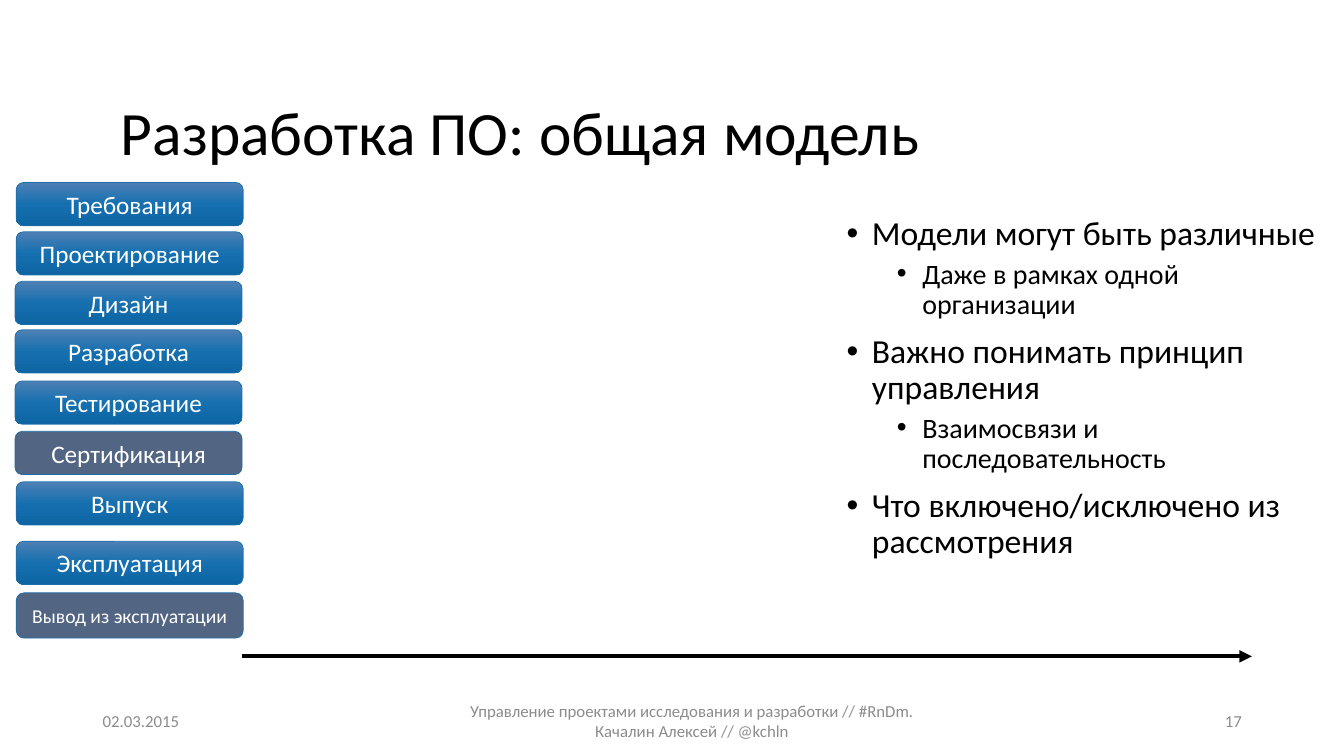
from copy import deepcopy

from lxml import etree
from pptx import Presentation
from pptx import util as u
from pptx.dml.color import RGBColor
from pptx.enum import shapes, text
from pptx.oxml.ns import qn

BLACK = RGBColor(0x00, 0x00, 0x00)
WHITE = RGBColor(0xFF, 0xFF, 0xFF)
GREY = RGBColor(0x8C, 0x8C, 0x8C)
SLATE = RGBColor(0x52, 0x65, 0x82)
OUTLINE = RGBColor(0x1D, 0x6F, 0xA9)
BLUES = [RGBColor(0x4E, 0x80, 0xB5), RGBColor(0x16, 0x70, 0xB0), RGBColor(0x0D, 0x65, 0xA3)]
LEFT, CENTER, RIGHT = text.PP_ALIGN.LEFT, text.PP_ALIGN.CENTER, text.PP_ALIGN.RIGHT


def write(paragraph, words, size, color=BLACK, align=LEFT, spacing=1.0, before=0):
    paragraph.alignment = align
    paragraph.line_spacing = spacing
    paragraph.space_before = u.Pt(before)
    run = paragraph.add_run()
    run.text = words
    run.font.name = "Calibri"
    run.font.size = u.Pt(size)
    run.font.color.rgb = color


def place(shape, left, top, width, height, anchor=text.MSO_ANCHOR.MIDDLE):
    shape.left, shape.top = u.Cm(left), u.Cm(top)
    shape.width, shape.height = u.Cm(width), u.Cm(height)
    frame = shape.text_frame
    frame.word_wrap = True
    frame.auto_size = text.MSO_AUTO_SIZE.NONE
    frame.vertical_anchor = anchor
    return frame


prs = Presentation()
prs.slide_width, prs.slide_height = u.Cm(33.87), u.Cm(19.05)
slide = prs.slides.add_slide(prs.slide_layouts[1])

# Title
heading = place(slide.shapes.title, 2.79, 2.13, 28.73, 2.57)
write(heading.paragraphs[0], "Разработка ПО: общая модель", 44, spacing=0.9)

# Date, footer and slide number
for left, width, align, words in [
    (2.34, 7.62, LEFT, "02.03.2015"),
    (11.23, 12.42, CENTER,
     "Управление проектами исследования и разработки // #RnDm. Качалин Алексей // @kchln"),
    (23.93, 7.62, RIGHT, "17"),
]:
    footer = place(slide.shapes.add_textbox(0, 0, 0, 0), left, 17.65, width, 1.02)
    write(footer.paragraphs[0], words, 12, GREY, align)

# Time arrow
timeline = slide.shapes.add_connector(
    shapes.MSO_CONNECTOR.STRAIGHT, u.Cm(6.1), u.Cm(16.54), u.Cm(31.55), u.Cm(16.54))
timeline.line.color.rgb = BLACK
timeline.line.width = u.Pt(3)
etree.SubElement(timeline.line._get_or_add_ln(), qn("a:tailEnd"), type="triangle")
etree.SubElement(timeline._element.spPr, qn("a:effectLst"))

# Life cycle stages; the optional ones are slate
for left, top, words, optional in [
    (0.41, 4.6, "Требования", False),
    (0.41, 5.84, "Проектирование", False),
    (0.38, 7.09, "Дизайн", False),
    (0.38, 8.31, "Разработка", False),
    (0.38, 9.6, "Тестирование", False),
    (0.38, 10.87, "Сертификация", True),
    (0.41, 12.14, "Выпуск", False),
    (0.41, 13.64, "Эксплуатация", False),
    (0.41, 14.94, "Вывод из эксплуатации", True),
]:
    is_long = len(words) > 14
    stage = slide.shapes.add_shape(shapes.MSO_SHAPE.ROUNDED_RECTANGLE, 0, 0, 0, 0)
    label = place(stage, left, top, 5.72, 1.14 if is_long else 1.09)
    write(label.paragraphs[0], words, 14 if is_long else 18, WHITE, CENTER)
    stage.shadow.inherit = False
    stage.line.color.rgb = OUTLINE
    stage.line.width = u.Pt(0.5)
    if optional:
        stage.fill.solid()
        stage.fill.fore_color.rgb = SLATE
    else:
        stage.fill.gradient()
        stage.fill.gradient_angle = 270
        stops = stage._element.spPr.find(".//" + qn("a:gsLst"))
        stops.append(deepcopy(stops[0]))
        for stop, position, blue in zip(stage.fill.gradient_stops, (0, 0.5, 1), BLUES):
            stop.position = position
            stop.color.rgb = blue

# Remarks
remarks = place(slide.placeholders[1], 21.08, 5.33, 12.5, 12.09, text.MSO_ANCHOR.TOP)
for index, (level, words) in enumerate([
    (0, "Модели могут быть различные"),
    (1, "Даже в рамках одной организации"),
    (0, "Важно понимать принцип управления"),
    (1, "Взаимосвязи и последовательность"),
    (0, "Что включено/исключено из рассмотрения"),
]):
    remark = remarks.add_paragraph() if index else remarks.paragraphs[0]
    remark.level = level
    properties = remark._p.get_or_add_pPr()
    properties.set("marL", str(u.Cm(0.64 + 1.27 * level)))
    properties.set("indent", str(-u.Cm(0.64)))
    etree.SubElement(properties, qn("a:buFont"), typeface="Arial")
    etree.SubElement(properties, qn("a:buChar"), char="•")
    before = (5 if level else 10) if index else 0
    write(remark, words, 20 if level else 24, spacing=0.9, before=before)

prs.save("out.pptx")
